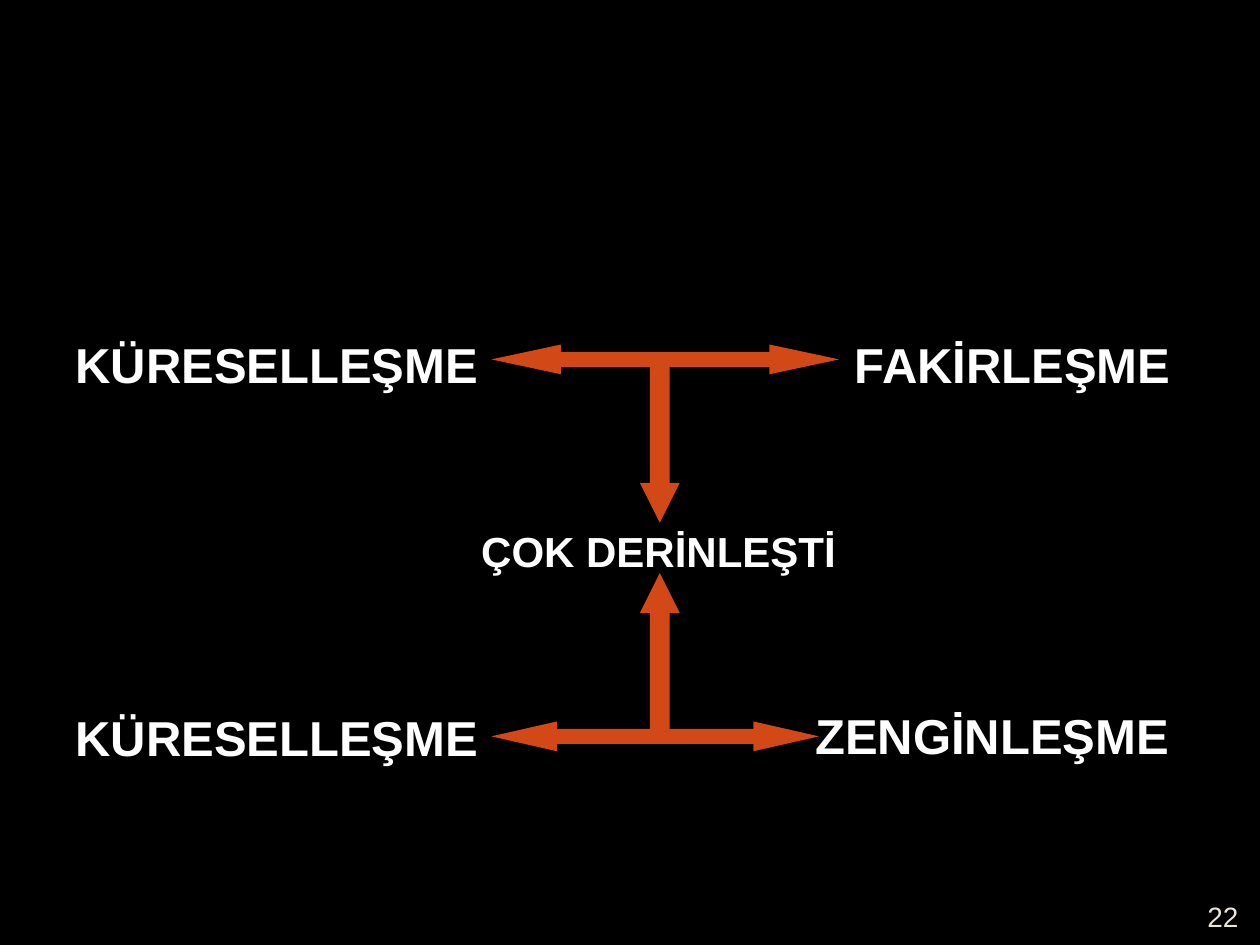
import pptx
import pptx.dml.color
import pptx.enum.shapes
import pptx.enum.text
import pptx.oxml.ns
import pptx.util
from lxml import etree

Pt = pptx.util.Pt
MSO_SHAPE = pptx.enum.shapes.MSO_SHAPE
PP_ALIGN = pptx.enum.text.PP_ALIGN


def color(value):
    return pptx.dml.color.RGBColor.from_string(value)


def format_font(p, size, value, bold=False):
    for r in p.runs:
        r.font.name = "Arial"
        r.font.size = Pt(size)
        r.font.bold = bold
        r.font.color.rgb = color(value)


def set_indent(p, indent):
    pPr = p._p.get_or_add_pPr()
    pPr.set("marL", str(Pt(indent)))
    pPr.set("indent", "0")
    etree.SubElement(pPr, pptx.oxml.ns.qn("a:buNone"))


def fill_body(sp, left, width, lines):
    sp.left, sp.top, sp.width, sp.height = Pt(left), Pt(191.1), Pt(width), Pt(289)
    tf = sp.text_frame
    tf.auto_size = pptx.enum.text.MSO_AUTO_SIZE.NONE
    tf.text = "\n".join(line[0] for line in lines)
    for p, (text, size, before, indent, align) in zip(tf.paragraphs, lines):
        set_indent(p, indent)
        p.alignment = align
        p.line_spacing = 0.9
        p.space_before = Pt(before)
        format_font(p, size, "FFFFFF", True)


def add_arrow(s, kind, left, top, width, height, head):
    sp = s.shapes.add_shape(kind, Pt(left), Pt(top), Pt(width), Pt(height))
    sp.shadow.inherit = False
    sp.adjustments[0] = 0.5
    sp.adjustments[1] = head
    sp.fill.solid()
    sp.fill.fore_color.rgb = color("D34817")
    sp.line.fill.background()


def add_page_number(s, text):
    sp = s.shapes.add_textbox(Pt(680.4), Pt(512.6), Pt(36.7), Pt(21.6))
    tf = sp.text_frame
    tf.word_wrap = True
    tf.margin_left = tf.margin_right = tf.margin_top = tf.margin_bottom = 0
    tf.vertical_anchor = pptx.enum.text.MSO_ANCHOR.MIDDLE
    tf.text = text
    p = tf.paragraphs[0]
    p.alignment = PP_ALIGN.CENTER
    format_font(p, 16, "E9E5DC")


def main():
    prs = pptx.Presentation()
    prs.slide_width, prs.slide_height = Pt(720), Pt(540)
    s = prs.slides.add_slide(prs.slide_layouts[3])
    s.background.fill.solid()
    s.background.fill.fore_color.rgb = color("000000")
    title = s.shapes.title
    title.element.getparent().remove(title.element)

    fill_body(s.placeholders[1], 36, 648, [
        ("KÜRESELLEŞME", 28, 0, 0, PP_ALIGN.LEFT),
        ("ÇOK DERİNLEŞTİ", 24, 78.6, 32.6, PP_ALIGN.CENTER),
        ("KÜRESELLEŞME", 28, 78.8, 0, PP_ALIGN.LEFT),
    ])
    fill_body(s.placeholders[2], 458.8, 225.2, [
        ("FAKİRLEŞME", 28, 0, 22.5, PP_ALIGN.LEFT),
        ("ZENGİNLEŞME", 28, 182.2, 0, PP_ALIGN.LEFT),
    ])
    add_page_number(s, "22")
    add_arrow(s, MSO_SHAPE.LEFT_RIGHT_ARROW, 280.8, 196.9, 198.7, 17, 2.34)
    add_arrow(s, MSO_SHAPE.DOWN_ARROW, 365.7, 208, 22.7, 90.7, 1)
    add_arrow(s, MSO_SHAPE.LEFT_RIGHT_ARROW, 280.8, 412.3, 187.2, 17, 2.2)
    add_arrow(s, MSO_SHAPE.UP_ARROW, 365.7, 327.5, 22.7, 90.7, 1)
    prs.save("out.pptx")


if __name__ == "__main__":
    main()
